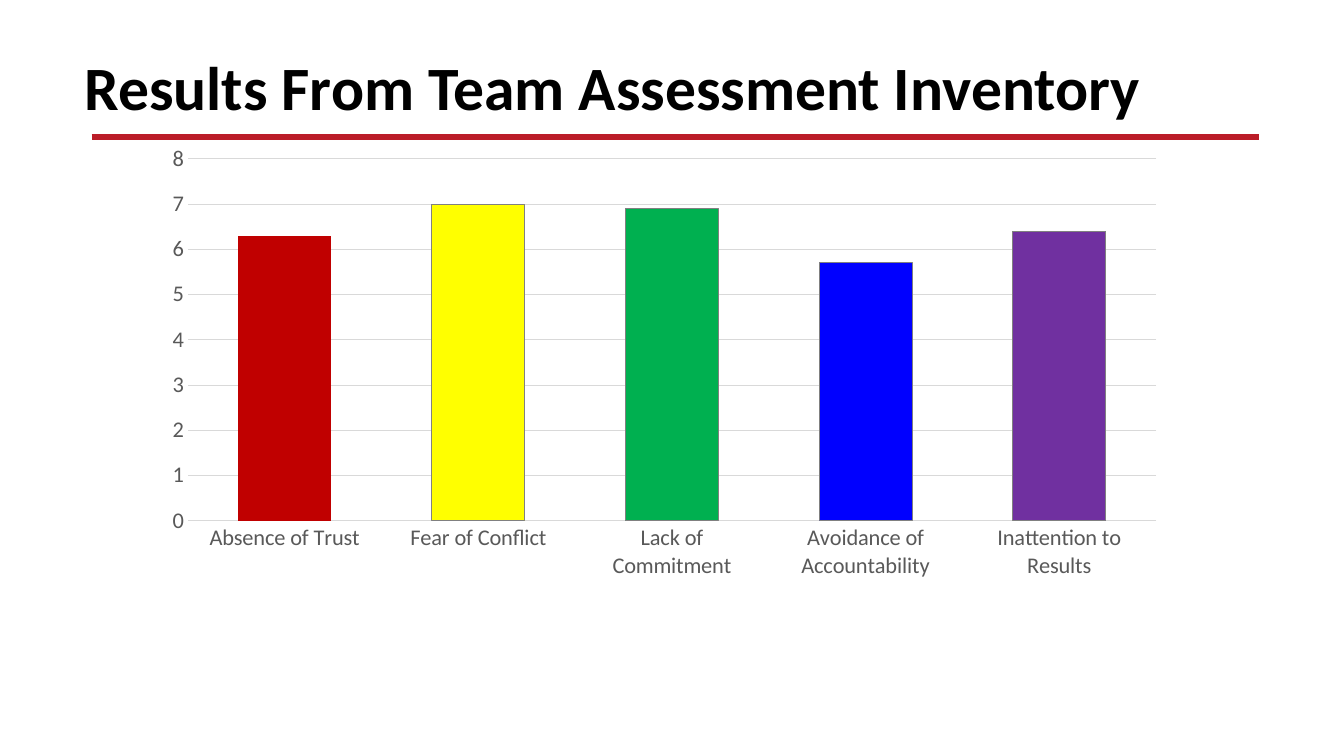
from lxml.etree import SubElement
from pptx import Presentation
from pptx.chart.data import CategoryChartData
from pptx.dml.color import RGBColor
from pptx.enum.chart import XL_CHART_TYPE, XL_TICK_MARK
from pptx.enum.shapes import MSO_CONNECTOR
from pptx.oxml import parse_xml
from pptx.oxml.ns import nsdecls, qn
from pptx.util import Inches, Pt

FONT = "Calibri"
RESULTS = [
    ("Absence of Trust", 6.3, "C00000"),
    ("Fear of Conflict", 7, "FFFF00"),
    ("Lack of Commitment", 6.9, "00B050"),
    ("Avoidance of Accountability", 5.7, "0000FF"),
    ("Inattention to Results", 6.4, "7030A0"),
]
PLOT_SHARES = {"x": 0.044, "y": 0.029, "w": 0.912, "h": 0.778}


def color(value):
    return RGBColor.from_string(value)


def set_font(font, size, value, bold=False):
    font.name, font.size, font.bold = FONT, Pt(size), bold
    font.color.rgb = color(value)


def set_line(line, value, width):
    line.color.rgb = color(value)
    line.width = Pt(width)


def add_header(slide, left, top, width, height):
    # Title
    tf = slide.shapes.add_textbox(
        Inches(left), Inches(top), Inches(width), Inches(height)).text_frame
    tf.word_wrap = True
    p = tf.paragraphs[0]
    p.text = "Results From Team Assessment Inventory"
    set_font(p.font, 44, "000000", bold=True)

    # Red rule under the title
    x, y = left + 0.17, top + height + 0.08
    rule = slide.shapes.add_connector(
        MSO_CONNECTOR.STRAIGHT, Inches(x), Inches(y), Inches(x + 11.58), Inches(y))
    set_line(rule.line, "BB1D28", 4.5)
    SubElement(rule.element.find(qn("p:spPr")), qn("a:effectLst"))


def place_plot(chart):
    # Fix the inner plot area as shares of the chart
    area = chart.element.find(".//" + qn("c:plotArea"))
    for layout in area.findall(qn("c:layout")):
        area.remove(layout)
    modes = '<c:xMode val="edge"/><c:yMode val="edge"/>'
    sizes = "".join(f'<c:{k} val="{v}"/>' for k, v in PLOT_SHARES.items())
    area.insert(0, parse_xml(
        f'<c:layout {nsdecls("c")}><c:manualLayout><c:layoutTarget val="inner"/>'
        f"{modes}{sizes}</c:manualLayout></c:layout>"))


def add_results_chart(slide, left, top, width, height):
    names, scores, fills = zip(*RESULTS)
    data = CategoryChartData()
    data.categories = names
    data.add_series("Series 1", scores)
    chart = slide.shapes.add_chart(
        XL_CHART_TYPE.COLUMN_CLUSTERED, Inches(left), Inches(top),
        Inches(width), Inches(height), data).chart
    chart.has_legend = chart.has_title = False
    set_font(chart.font, 10, "000000")
    place_plot(chart)

    # Axes
    for axis in (chart.category_axis, chart.value_axis):
        axis.major_tick_mark = axis.minor_tick_mark = XL_TICK_MARK.NONE
        axis.format.line.fill.background()
        set_font(axis.tick_labels.font, 16, "595959")
    scale = chart.value_axis
    scale.minimum_scale, scale.maximum_scale, scale.major_unit = 0, 8, 1
    set_line(scale.major_gridlines.format.line, "D9D9D9", 0.75)

    # Columns, outlined except the first
    plot = chart.plots[0]
    plot.gap_width = 108
    plot.vary_by_categories = False
    series = plot.series[0]
    series.format.fill.solid()
    series.format.fill.fore_color.rgb = color("4472C4")
    set_line(series.format.line, "808080", 0.75)
    for i, value in enumerate(fills):
        fmt = series.points[i].format
        fmt.fill.solid()
        fmt.fill.fore_color.rgb = color(value)
        if i:
            set_line(fmt.line, "808080", 0.75)
        else:
            fmt.line.fill.background()


def main():
    prs = Presentation()
    prs.slide_width, prs.slide_height = Inches(13.33), Inches(7.5)
    slide = prs.slides.add_slide(prs.slide_layouts[6])
    add_header(slide, 0.74, 0.44, 10.96, 0.84)
    add_results_chart(slide, 1.4, 1.44, 10.53, 4.62)
    prs.save("out.pptx")


if __name__ == "__main__":
    main()
